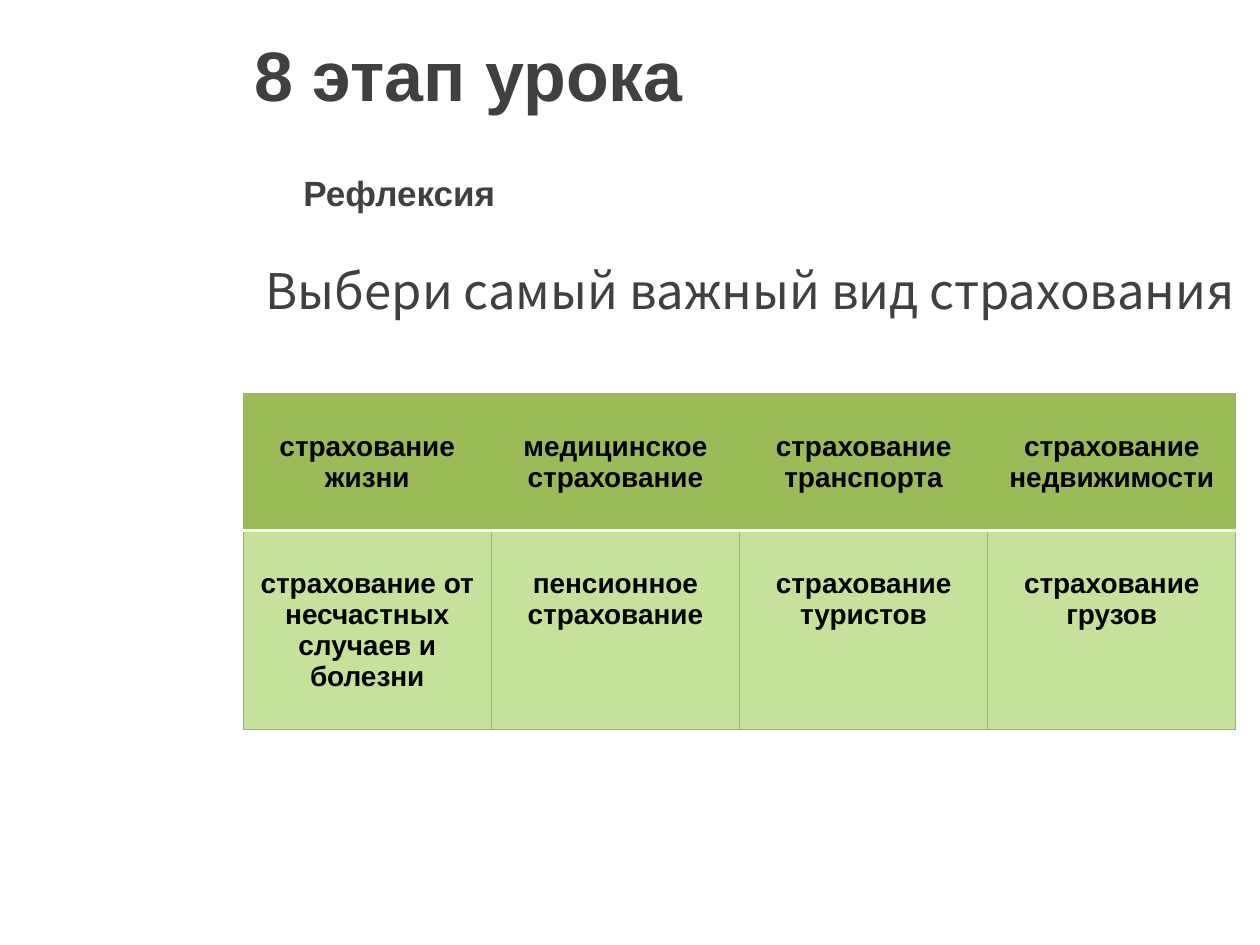
from pptx import Presentation
from pptx.dml.color import RGBColor
from pptx.enum.text import MSO_ANCHOR, PP_ALIGN
from pptx.oxml import parse_xml
from pptx.oxml.ns import nsdecls
from pptx.util import Inches, Pt

MIDDLE, TOP = MSO_ANCHOR.MIDDLE, MSO_ANCHOR.TOP
LEFT, CENTER = PP_ALIGN.LEFT, PP_ALIGN.CENTER

COLORS = {"text": "404040", "cell": "000000", "header": "9BBB59",
          "body": "C6E29A", "border": "98B955", "divider": "FFFFFF"}

TITLE = "8 этап урока"
SUBTITLE = "Рефлексия"
QUESTION = "Выбери самый важный вид страхования"
INSURANCE = [
    [["страхование", "жизни"],
     ["медицинское", "страхование"],
     ["страхование", "транспорта"],
     ["страхование", "недвижимости"]],
    [["страхование от несчастных", "случаев и", "болезни"],
     ["пенсионное", "страхование"],
     ["страхование", "туристов"],
     ["страхование", "грузов"]],
]
TABLE_BOX = (1.93, 3.12, 7.88, 2.67)
ROW_HEIGHTS = [1.09, 1.58]


def style(p, size, color, font="Arial", bold=True, align=LEFT):
    p.alignment = align
    p.font.name = font
    p.font.size = Pt(size)
    p.font.bold = bold
    p.font.color.rgb = RGBColor.from_string(COLORS[color])


def fill_text(sp, box, text, size, margin=0.1, anchor=TOP, **font):
    sp.left, sp.top, sp.width, sp.height = map(Inches, box)
    tf = sp.text_frame
    tf.word_wrap = True
    tf.vertical_anchor = anchor
    tf.margin_left = Inches(margin)
    tf.text = text
    style(tf.paragraphs[0], size, "text", **font)


def set_borders(cell, lines):
    tcPr = cell._tc.get_or_add_tcPr()
    for i, (side, (color, width)) in enumerate(lines.items()):
        tcPr.insert(i, parse_xml(
            f'<a:{side} {nsdecls("a")} w="{Pt(width)}"><a:solidFill>'
            f'<a:srgbClr val="{COLORS[color]}"/></a:solidFill></a:{side}>'))


prs = Presentation()
prs.slide_width, prs.slide_height = Inches(10), Inches(7.5)
s = prs.slides.add_slide(prs.slide_layouts[5])

fill_text(s.shapes.title, (1.77, 0, 8.23, 1.17), TITLE, 40, 0.25, MIDDLE)
for box, text, size, font in [
    ((2.31, 1.31, 7.18, 0.79), SUBTITLE, 20, {}),
    ((1.68, 2.02, 8.31, 0.71), QUESTION, 28,
     {"margin": 0.43, "font": "Noto Sans CJK KR", "bold": False}),
]:
    fill_text(s.shapes.add_textbox(0, 0, 0, 0), box, text, size, **font)

table = s.shapes.add_table(len(INSURANCE), len(INSURANCE[0]),
                           *map(Inches, TABLE_BOX)).table
for column in table.columns:
    column.width = Inches(TABLE_BOX[2] / len(INSURANCE[0]))

thin, thick = ("border", 0.75), ("divider", 2)
for r, row in enumerate(INSURANCE):
    table.rows[r].height = Inches(ROW_HEIGHTS[r])
    for c, lines in enumerate(row):
        cell = table.cell(r, c)
        cell.margin_top = Inches(0.3)
        cell.fill.solid()
        cell.fill.fore_color.rgb = RGBColor.from_string(
            COLORS["body" if r else "header"])
        set_borders(cell, {"lnL": thin, "lnR": thin,
                           "lnT": thick if r else thin,
                           "lnB": thin if r else thick})
        cell.text = "\n".join(lines)
        for p in cell.text_frame.paragraphs:
            style(p, 16, "cell", align=CENTER)

prs.save("out.pptx")
